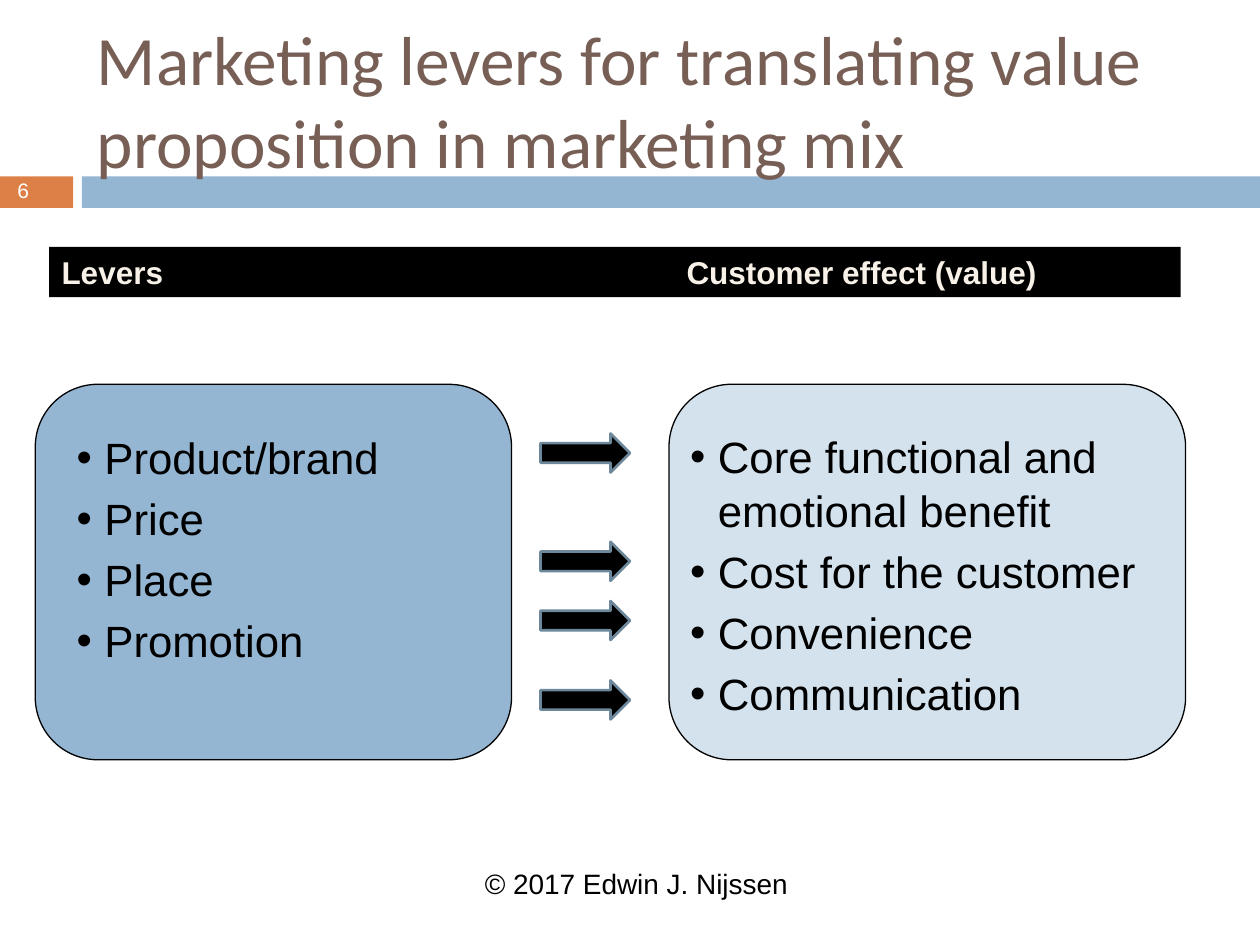
from lxml.etree import SubElement
from pptx import Presentation
from pptx.dml.color import RGBColor
from pptx.enum.shapes import MSO_SHAPE
from pptx.enum.text import MSO_ANCHOR, PP_ALIGN
from pptx.oxml.ns import qn
from pptx.util import Inches, Pt

BLACK = RGBColor(0x00, 0x00, 0x00)
WHITE = RGBColor(0xFF, 0xFF, 0xFF)
CREAM = RGBColor(0xF7, 0xF1, 0xE7)
BROWN = RGBColor(0x77, 0x5F, 0x55)
ORANGE = RGBColor(0xDD, 0x80, 0x47)
BLUE = RGBColor(0x94, 0xB6, 0xD2)
PALE_BLUE = RGBColor(0xD4, 0xE2, 0xED)
SLATE = RGBColor(0x6D, 0x87, 0x9B)

LEVERS = ["Product/brand", "Price", "Place", "Promotion"]
EFFECTS = ["Core functional and emotional benefit", "Cost for the customer",
           "Convenience", "Communication"]
ARROW_TOPS = [3.44, 4.3, 4.77, 5.4]


def add_block(page, kind, box, fill, line=None, weight=0.75):
    shape = page.shapes.add_shape(kind, *map(Inches, box))
    shape.shadow.inherit = False
    shape.fill.solid()
    shape.fill.fore_color.rgb = fill
    if line is None:
        shape.line.fill.background()
    else:
        shape.line.color.rgb = line
        shape.line.width = Pt(weight)
    return shape


def write_lines(frame, lines, size, color, font="Arial", bold=False):
    frame.word_wrap = True
    frame.text = "\n".join(lines)
    for para in frame.paragraphs:
        para.alignment = PP_ALIGN.LEFT
        for span in para.runs:
            span.font.name = font
            span.font.size = Pt(size)
            span.font.bold = bold
            span.font.color.rgb = color


def add_text(page, box, lines, size, color, font="Arial", anchor=MSO_ANCHOR.TOP):
    frame = page.shapes.add_textbox(*map(Inches, box)).text_frame
    write_lines(frame, lines, size, color, font)
    frame.vertical_anchor = anchor
    return frame


def add_title_band(page, box):
    left, top, width, height = box
    tab_width, gap = 0.58, 0.07
    bar_left = left + tab_width + gap
    add_block(page, MSO_SHAPE.RECTANGLE, (left, top, tab_width, height), ORANGE)
    add_block(page, MSO_SHAPE.RECTANGLE,
              (bar_left, top, width - bar_left, height), BLUE)
    add_text(page, (left + 0.04, top - 0.09, 2.92, 0.4), ["6"], 12, WHITE,
             anchor=MSO_ANCHOR.MIDDLE)
    add_text(page, (left + 0.67, top - 1.15, 8.92, 1.08),
             ["Marketing levers for translating value proposition in marketing mix"],
             39.6, BROWN, "Calibri", MSO_ANCHOR.MIDDLE)


def add_header(page, box):
    header = add_block(page, MSO_SHAPE.RECTANGLE, box, BLACK)
    frame = header.text_frame
    write_lines(frame, ["Levers\tCustomer effect (value)"], 18, CREAM, bold=True)
    frame.vertical_anchor = MSO_ANCHOR.TOP
    properties = frame.paragraphs[0]._p.get_or_add_pPr()
    tabs = SubElement(properties, qn("a:tabLst"))
    SubElement(tabs, qn("a:tab"), pos=str(Inches(4.96)), algn="l")


def add_list_panel(page, box, fill, text_box, items):
    add_block(page, MSO_SHAPE.ROUNDED_RECTANGLE, box, fill, BLACK)
    frame = add_text(page, text_box, items, 25, BLACK)
    for para in frame.paragraphs:
        para.line_spacing = 1.03
        para.space_after = Pt(4)
        properties = para._p.get_or_add_pPr()
        properties.set("marL", str(Inches(0.22)))
        properties.set("indent", str(-Inches(0.22)))
        SubElement(properties, qn("a:buFont"), typeface="Arial")
        SubElement(properties, qn("a:buChar"), char="•")


def add_arrows(page, left, tops):
    for top in tops:
        add_block(page, MSO_SHAPE.RIGHT_ARROW, (left, top, 0.71, 0.31),
                  BLACK, SLATE, 1.5)


def main():
    deck = Presentation()
    deck.slide_width, deck.slide_height = Inches(10), Inches(7.5)
    page = deck.slides.add_slide(deck.slide_layouts[6])
    add_title_band(page, (0, 1.4, 10, 0.25))
    add_header(page, (0.39, 1.96, 8.98, 0.4))
    add_list_panel(page, (0.28, 3.05, 3.78, 2.98), BLUE,
                   (0.51, 3.36, 3.31, 1.95), LEVERS)
    add_list_panel(page, (5.31, 3.05, 4.1, 2.98), PALE_BLUE,
                   (5.38, 3.35, 4.17, 2.37), EFFECTS)
    add_arrows(page, 4.29, ARROW_TOPS)
    add_text(page, (3.75, 6.83, 2.76, 0.37), ["© 2017 Edwin J. Nijssen"], 16, BLACK)
    deck.save("out.pptx")


if __name__ == "__main__":
    main()
